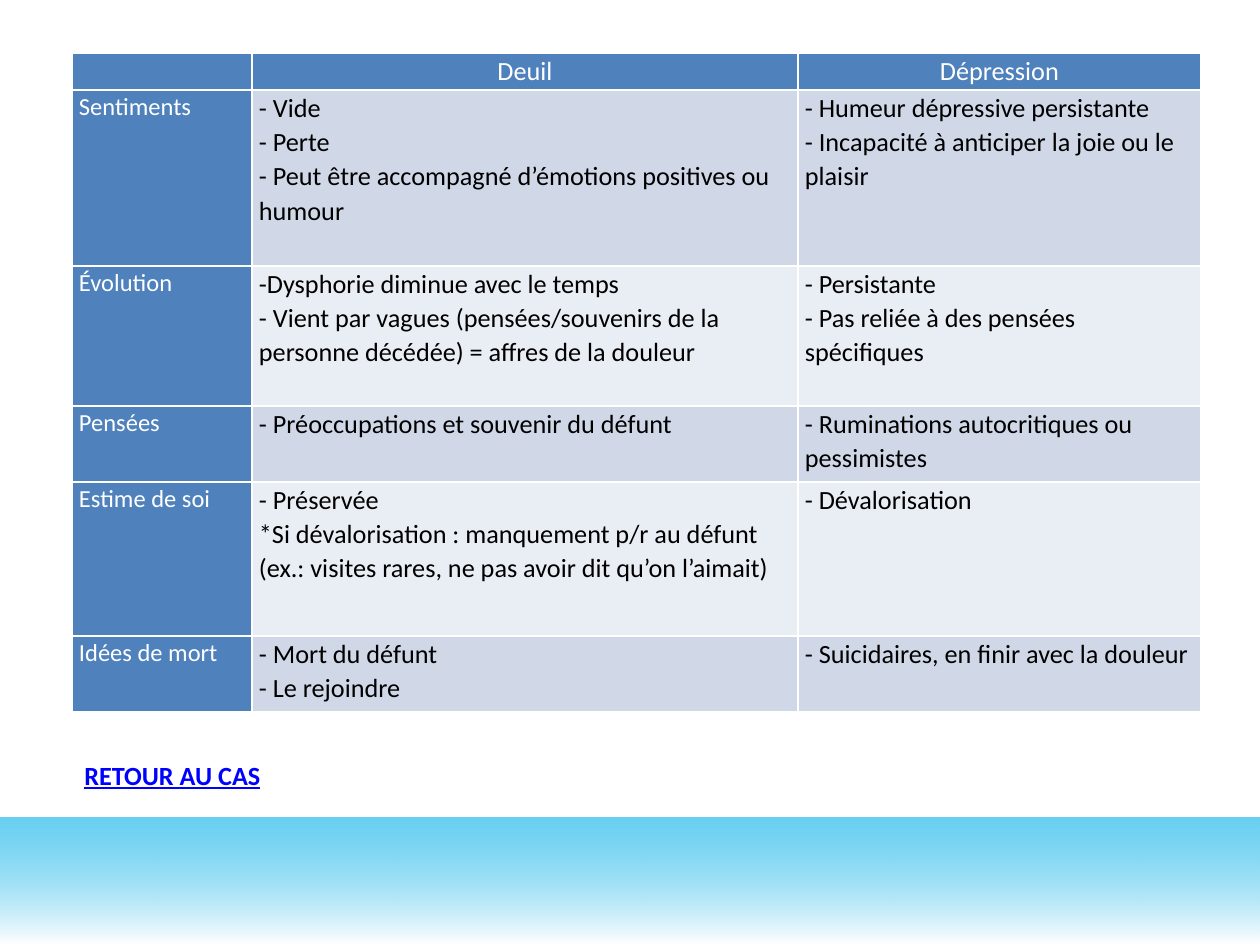
import pptx
import pptx.util
import pptx.dml.color
import pptx.enum.shapes
import pptx.enum.text
import pptx.oxml.ns
import lxml.etree

RGBColor = pptx.dml.color.RGBColor
BLUE = RGBColor(0x4F, 0x81, 0xBD)
BAND_DARK = RGBColor(0xD0, 0xD8, 0xE8)
BAND_LIGHT = RGBColor(0xE9, 0xED, 0xF4)
SKY = RGBColor(0x13, 0xB5, 0xEA)
LINK = RGBColor(0x00, 0x00, 0xFF)
WHITE = RGBColor(0xFF, 0xFF, 0xFF)
BLACK = RGBColor(0x00, 0x00, 0x00)

FONT = "Calibri"
SCALE = 914400 // 126
COLUMN_WIDTHS = [180, 546, 403]
ROW_HEIGHTS = [37, 176, 140, 76, 154, 76]
ROWS = [
    ("", "Deuil", "Dépression"),
    ("Sentiments",
     "- Vide\n- Perte\n- Peut être accompagné d’émotions positives ou humour",
     "- Humeur dépressive persistante\n- Incapacité à anticiper la joie ou le plaisir"),
    ("Évolution",
     "-Dysphorie diminue avec le temps\n- Vient par vagues (pensées/souvenirs de la "
     "personne décédée) = affres de la douleur",
     "- Persistante\n- Pas reliée à des pensées spécifiques"),
    ("Pensées",
     "- Préoccupations et souvenir du défunt",
     "- Ruminations autocritiques ou pessimistes"),
    ("Estime de soi",
     "- Préservée\n*Si dévalorisation : manquement p/r au défunt "
     "(ex.: visites rares, ne pas avoir dit qu’on l’aimait)",
     "- Dévalorisation"),
    ("Idées de mort",
     "- Mort du défunt\n- Le rejoindre",
     "- Suicidaires, en finir avec la douleur"),
]
RETURN_LABEL = "RETOUR AU CAS"


def px(value):
    return pptx.util.Emu(value * SCALE)


def add_element(parent, tag, **attributes):
    return lxml.etree.SubElement(parent, pptx.oxml.ns.qn(tag), **attributes)


def format_run(run, size, color, bold=False):
    run.font.name = FONT
    run.font.size = pptx.util.Pt(size)
    run.font.bold = bold
    run.font.color.rgb = color


def set_borders(cell):
    properties = cell._tc.get_or_add_tcPr()
    for position, side in enumerate(("a:lnL", "a:lnR", "a:lnT", "a:lnB")):
        line = add_element(properties, side, w=str(pptx.util.Pt(1)))
        add_element(add_element(line, "a:solidFill"), "a:srgbClr", val=str(WHITE))
        properties.insert(position, line)


def fill_cell(cell, text, row, column):
    heading = row == 0 or column == 0
    size = 14 if column == 0 else 15
    cell.margin_left = cell.margin_right = px(7)
    cell.margin_top = cell.margin_bottom = 0
    cell.fill.solid()
    cell.fill.fore_color.rgb = BLUE if heading else BAND_DARK if row % 2 else BAND_LIGHT
    set_borders(cell)
    cell.text_frame.text = text
    for para in cell.text_frame.paragraphs:
        para.line_spacing = 1.07
        if row == 0:
            para.alignment = pptx.enum.text.PP_ALIGN.CENTER
        for run in para.runs:
            format_run(run, size, WHITE if heading else BLACK)
        if not para.runs:
            add_element(para._p, "a:endParaRPr", sz=str(size * 100))


def add_sky_band(page):
    band = page.shapes.add_shape(
        pptx.enum.shapes.MSO_SHAPE.RECTANGLE, 0, px(818), px(1260), px(127))
    band.shadow.inherit = False
    band.line.fill.background()
    band.fill.gradient()
    band.fill.gradient_angle = 270
    for stop, color, position in zip(band.fill.gradient_stops, (SKY, WHITE), (0, 1)):
        stop.color.rgb = color
        stop.position = position
    sky_color = band._element.spPr.find(".//" + pptx.oxml.ns.qn("a:srgbClr"))
    add_element(sky_color, "a:alpha", val="63000")


def add_comparison(page):
    table = page.shapes.add_table(
        len(ROWS), len(COLUMN_WIDTHS), px(72), px(53),
        px(sum(COLUMN_WIDTHS)), px(sum(ROW_HEIGHTS))).table
    for column, width in zip(table.columns, COLUMN_WIDTHS):
        column.width = px(width)
    for row, height in zip(table.rows, ROW_HEIGHTS):
        row.height = px(height)
    for row, texts in enumerate(ROWS):
        for column, text in enumerate(texts):
            fill_cell(table.cell(row, column), text, row, column)


def add_return_label(page):
    box = page.shapes.add_textbox(px(72), px(753), px(204), px(44))
    box.text_frame.word_wrap = False
    box.text_frame.text = RETURN_LABEL
    run = box.text_frame.paragraphs[0].runs[0]
    format_run(run, 15, LINK, bold=True)
    run.font.underline = True


def main():
    deck = pptx.Presentation()
    deck.slide_width = pptx.util.Inches(10)
    deck.slide_height = pptx.util.Inches(7.5)
    page = deck.slides.add_slide(deck.slide_layouts[6])
    add_sky_band(page)
    add_comparison(page)
    add_return_label(page)
    deck.save("out.pptx")


if __name__ == "__main__":
    main()
